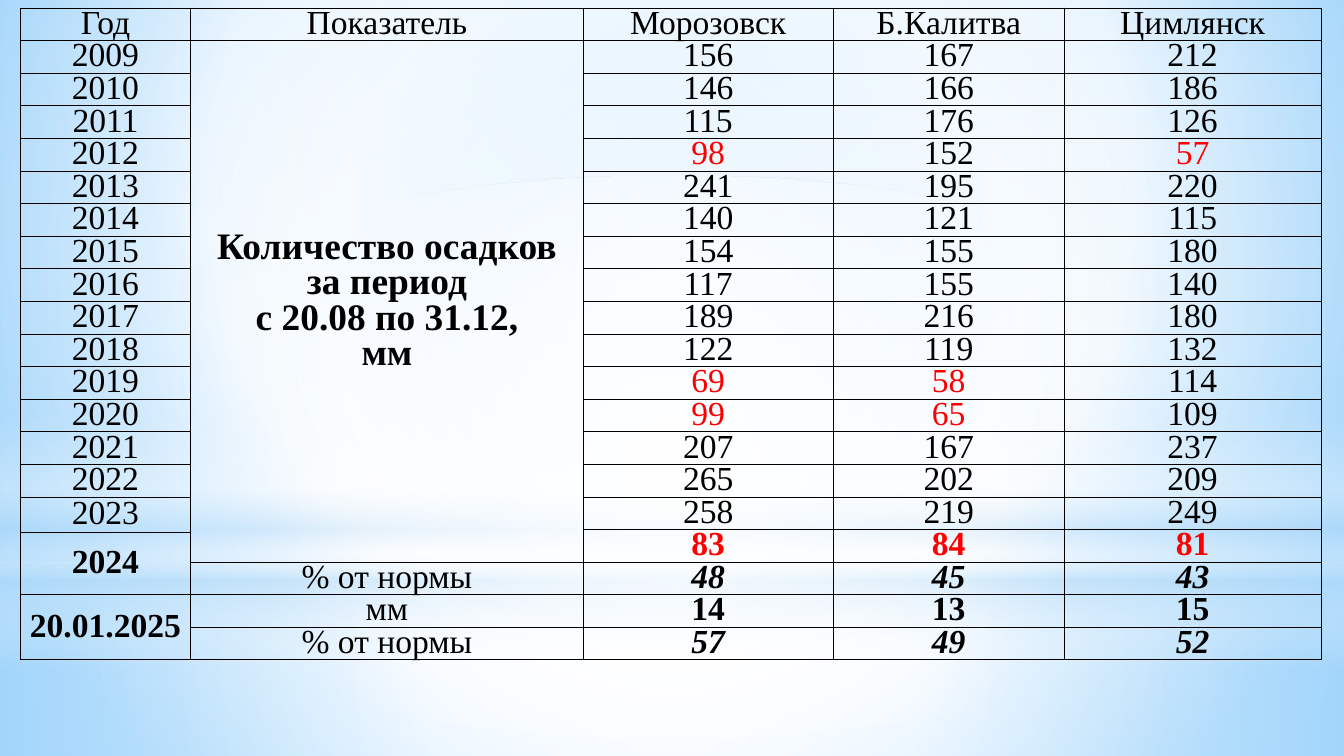
from dataclasses import dataclass
from lxml import etree
from pptx import Presentation
from pptx.dml.color import RGBColor
from pptx.enum.shapes import MSO_SHAPE
from pptx.enum.text import MSO_ANCHOR, PP_ALIGN
from pptx.oxml import parse_xml
from pptx.oxml.ns import nsdecls, qn
from pptx.util import Inches, Pt

BLACK = RGBColor(0x00, 0x00, 0x00)
RED = RGBColor(0xFF, 0x00, 0x00)
WHITE = RGBColor(0xFF, 0xFF, 0xFF)
PALE_BLUE = RGBColor(0xB4, 0xDC, 0xFA)
SKY_BLUE = RGBColor(0x9E, 0xD5, 0xFF)
DEEP_BLUE = RGBColor(0x5B, 0xB9, 0xFF)

FONT = "Times New Roman"
DRY_LIMIT = 100  # millimetres; drier seasons are shown in red
COLUMN_WIDTHS = (1.27, 2.92, 1.86, 1.72, 1.91)
ROW_HEIGHT = 0.24
LAST_SEASON_ROW = 17
ROW_HEIGHTS = {16: 0.02, 17: 0.22}
MERGES = (((1, 1), (17, 1)), ((15, 0), (16, 0)), ((17, 0), (18, 0)), ((19, 0), (20, 0)),
          *(((16, column), (17, column)) for column in (2, 3, 4)))


@dataclass(frozen=True)
class Stop:
    position: int
    color: RGBColor
    alpha: int = 100


@dataclass(frozen=True)
class Glow:
    shape: MSO_SHAPE
    top: float
    height: float
    stops: tuple[Stop, ...]
    linear: bool = False


@dataclass(frozen=True)
class Record:
    year: str
    indicator: str
    values: tuple[str, ...]
    bold: bool = False
    italic: bool = False


GLOWS = (
    Glow(MSO_SHAPE.RECTANGLE, 4.19, 1.44,
         (Stop(0, WHITE, 91), Stop(37, WHITE, 76), Stop(100, PALE_BLUE, 79))),
    Glow(MSO_SHAPE.RECTANGLE, 0, 4.19,
         (Stop(0, WHITE, 89), Stop(48, WHITE, 62), Stop(100, PALE_BLUE, 79))),
    Glow(MSO_SHAPE.RECTANGLE, 3.09, 1.88,
         (Stop(0, WHITE, 0), Stop(29, WHITE, 30), Stop(45, PALE_BLUE, 40),
          Stop(55, WHITE, 26), Stop(65, PALE_BLUE, 60), Stop(100, WHITE, 0)), linear=True),
    Glow(MSO_SHAPE.OVAL, 1.31, 4.19, (Stop(0, WHITE), Stop(56, WHITE, 0))),
)
BACKGROUND = (Stop(0, SKY_BLUE), Stop(60, WHITE), Stop(100, DEEP_BLUE))

SEASONS = (
    "156 167 212", "146 166 186", "115 176 126", "98 152 57", "241 195 220",
    "140 121 115", "154 155 180", "117 155 140", "189 216 180", "122 119 132",
    "69 58 114", "99 65 109", "207 167 237", "265 202 209", "258 219 249",
)
PERIOD = "Количество осадков\nза период\nс 20.08 по 31.12,\nмм"
SHARE = "% от нормы"
RECORDS = (
    Record("Год", "Показатель", ("Морозовск", "Б.Калитва", "Цимлянск")),
    *(Record(str(2009 + index), "" if index else PERIOD, tuple(season.split()))
      for index, season in enumerate(SEASONS)),
    Record("", "", ("83", "84", "81"), bold=True),
    Record("2024", "", ("", "", ""), bold=True),
    Record("", SHARE, ("48", "45", "43"), bold=True, italic=True),
    Record("20.01.2025", "мм", ("14", "13", "15"), bold=True),
    Record("", SHARE, ("57", "49", "52"), bold=True, italic=True),
)


def gradient(stops: tuple[Stop, ...], focus=(50, 50, 50, 50), linear: bool = False):
    """Return a gradient fill; focus gives the left, top, right and bottom percentages."""
    marks = "".join(
        f'<a:gs pos="{stop.position * 1000}"><a:srgbClr val="{stop.color}">'
        f'<a:alpha val="{stop.alpha * 1000}"/></a:srgbClr></a:gs>' for stop in stops)
    sides = " ".join(f'{side}="{part * 1000}"' for side, part in zip("ltrb", focus))
    course = ('<a:lin ang="5400000" scaled="0"/>' if linear else
              f'<a:path path="circle"><a:fillToRect {sides}/></a:path>')
    return parse_xml(f'<a:gradFill {nsdecls("a")} rotWithShape="1">'
                     f'<a:gsLst>{marks}</a:gsLst>{course}</a:gradFill>')


def replace_solid_fill(parent, fill) -> None:
    solid = parent.find(qn("a:solidFill"))
    parent.replace(solid, fill)


def draw_glow(page, glow: Glow) -> None:
    shape = page.shapes.add_shape(glow.shape, 0, Inches(glow.top), Inches(10), Inches(glow.height))
    shape.shadow.inherit = False
    shape.line.fill.background()
    shape.fill.solid()
    replace_solid_fill(shape._element.spPr, gradient(glow.stops, linear=glow.linear))


def add_borders(cell) -> None:
    properties = cell._tc.get_or_add_tcPr()
    for index, side in enumerate(("lnL", "lnR", "lnT", "lnB")):
        line = etree.Element(qn(f"a:{side}"), w=str(Pt(0.5)))
        fill = etree.SubElement(line, qn("a:solidFill"))
        etree.SubElement(fill, qn("a:srgbClr"), val=str(BLACK))
        properties.insert(index, line)


def fill_cell(cell, text: str, anchor: MSO_ANCHOR, color: RGBColor, formats: dict) -> None:
    cell.fill.background()
    add_borders(cell)
    layout = {"margin_left": Pt(0.5), "margin_right": Pt(0.5),
              "margin_top": Pt(0.5), "margin_bottom": 0, "vertical_anchor": anchor}
    for name, value in layout.items():
        setattr(cell, name, value)
    para = cell.text_frame.paragraphs[0]
    para.alignment = PP_ALIGN.CENTER
    para.line_spacing = 0.85
    para.text = text.replace("\n", "\v")
    for span in para.runs:
        span.font.color.rgb = color
        for name, value in formats.items():
            setattr(span.font, name, value)


def fill_row(table, row: int, record: Record) -> None:
    for column, text in enumerate((record.year, record.indicator, *record.values)):
        is_value = column >= 2
        is_dry = (is_value and row <= LAST_SEASON_ROW
                  and text.isdigit() and int(text) < DRY_LIMIT)
        is_period = text == PERIOD
        is_low = text == SHARE or (row == 0 and is_value)
        formats = {
            "name": FONT,
            "size": Pt(20 if is_period else 18),
            "bold": is_period or (column != 1 and record.bold),
            "italic": is_value and record.italic,
        }
        anchor = MSO_ANCHOR.BOTTOM if is_low else MSO_ANCHOR.MIDDLE
        fill_cell(table.cell(row, column), text, anchor, RED if is_dry else BLACK, formats)


def draw_table(page) -> None:
    frame = page.shapes.add_table(len(RECORDS), len(COLUMN_WIDTHS), Inches(0.15), Inches(0.06),
                                  Inches(sum(COLUMN_WIDTHS)), Inches(ROW_HEIGHT * 20))
    table = frame.table
    table.first_row = False
    table.horz_banding = False
    for column, width in zip(table.columns, COLUMN_WIDTHS):
        column.width = Inches(width)
    for index, record in enumerate(RECORDS):
        table.rows[index].height = Inches(ROW_HEIGHTS.get(index, ROW_HEIGHT))
        fill_row(table, index, record)
    for first, last in MERGES:
        table.cell(*first).merge(table.cell(*last))


def main() -> None:
    deck = Presentation()
    deck.slide_width = Inches(10)
    deck.slide_height = Inches(10 * 9 / 16)
    page = deck.slides.add_slide(deck.slide_layouts[6])
    page.background.fill.solid()
    replace_solid_fill(page._element.cSld.bg.bgPr, gradient(BACKGROUND, (20, 10, 20, 60)))
    for glow in GLOWS:
        draw_glow(page, glow)
    draw_table(page)
    deck.save("out.pptx")


if __name__ == "__main__":
    main()
